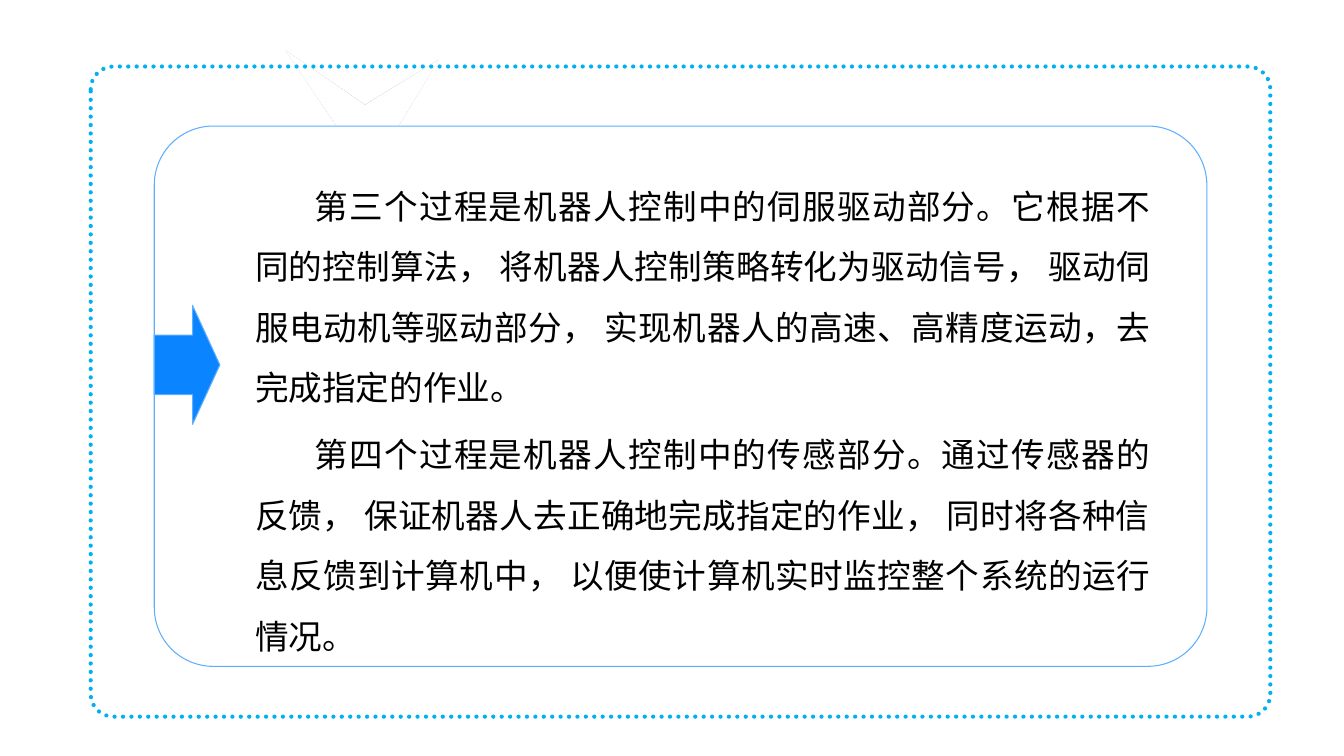
from lxml.etree import SubElement
from pptx import Presentation
from pptx.dml.color import RGBColor
from pptx.enum.dml import MSO_LINE
from pptx.enum.shapes import MSO_SHAPE
from pptx.enum.text import MSO_ANCHOR, MSO_AUTO_SIZE, PP_ALIGN
from pptx.oxml import parse_xml
from pptx.oxml.ns import nsdecls, qn
from pptx.util import Inches, Pt

WHITE = RGBColor(0xFF, 0xFF, 0xFF)
BLACK = RGBColor(0x00, 0x00, 0x00)
BLUE = RGBColor(0x0B, 0x85, 0xFF)
LIGHT_BLUE = RGBColor(0x5D, 0xAE, 0xFF)
SKY_BLUE = RGBColor(0x00, 0xB0, 0xF0)

PROCESSES = [
    "第三个过程是机器人控制中的伺服驱动部分。它根据不同的控制算法， 将机器人控制策略转化为驱动信号， "
    "驱动伺服电动机等驱动部分， 实现机器人的高速、高精度运动，去完成指定的作业。",
    "第四个过程是机器人控制中的传感部分。通过传感器的反馈， 保证机器人去正确地完成指定的作业， "
    "同时将各种信息反馈到计算机中， 以便使计算机实时监控整个系统的运行情况。",
]


class SlideBuilder:
    """Draws on one slide; every area is left, top, width, height in percent of the slide."""

    font_name = "Noto Sans CJK SC"
    font_size = Pt(24)
    line_spacing = 1.5
    first_line_indent = Inches(0.59)

    def __init__(self, presentation):
        self.width = presentation.slide_width
        self.height = presentation.slide_height
        self.slide = presentation.slides.add_slide(presentation.slide_layouts[1])
        title = self.slide.shapes.title
        title.element.getparent().remove(title.element)

    def place(self, area):
        sides = (self.width, self.height) * 2
        return [round(side * share / 100) for side, share in zip(sides, area)]

    def add_shape(self, kind, area, adjustments, fill=None, line=None, line_width=0.75):
        shape = self.slide.shapes.add_shape(kind, *self.place(area))
        shape.shadow.inherit = False
        for index, value in enumerate(adjustments):
            shape.adjustments[index] = value
        if fill is None:
            shape.fill.background()
        else:
            shape.fill.solid()
            shape.fill.fore_color.rgb = fill
        if line is None:
            shape.line.fill.background()
        else:
            shape.line.color.rgb = line
            shape.line.width = Pt(line_width)
        return shape

    def add_fading_star(self, area):
        """Adds a tilted star whose white fill fades between centre and edge."""
        star = self.add_shape(MSO_SHAPE.STAR_4_POINT, area, [0.125])
        star.rotation = 315
        gradient = parse_xml(
            f'<a:gradFill {nsdecls("a")} rotWithShape="1"><a:gsLst>'
            f'<a:gs pos="0"><a:srgbClr val="{WHITE}"/></a:gs>'
            f'<a:gs pos="100000"><a:srgbClr val="{WHITE}"><a:alpha val="0"/></a:srgbClr></a:gs>'
            '</a:gsLst><a:path path="shape">'
            '<a:fillToRect l="50000" t="50000" r="50000" b="50000"/></a:path></a:gradFill>'
        )
        properties = star.element.spPr
        properties.replace(properties.find(qn("a:noFill")), gradient)

    def add_dotted_frame(self, area):
        frame = self.add_shape(MSO_SHAPE.ROUNDED_RECTANGLE, area, [0.035],
                               line=SKY_BLUE, line_width=3)
        frame.line.dash_style = MSO_LINE.ROUND_DOT
        frame.element.spPr.find(qn("a:ln")).set("cap", "rnd")

    def add_body(self, area, texts):
        body = self.slide.placeholders[1]
        # The placeholder exists before the shapes, so it moves to the front here.
        self.slide.shapes.element.append(body.element)
        body.left, body.top, body.width, body.height = self.place(area)
        frame = body.text_frame
        frame.word_wrap = True
        frame.auto_size = MSO_AUTO_SIZE.SHAPE_TO_FIT_TEXT
        frame.vertical_anchor = MSO_ANCHOR.TOP
        for index, text in enumerate(texts):
            paragraph = frame.add_paragraph() if index else frame.paragraphs[0]
            self.format_paragraph(paragraph, Pt(4.8) if index else Pt(0))
            self.add_run(paragraph, text)

    def format_paragraph(self, paragraph, space_before):
        paragraph.alignment = PP_ALIGN.JUSTIFY
        paragraph.line_spacing = self.line_spacing
        paragraph.space_before = space_before
        paragraph.space_after = Pt(0)
        properties = paragraph._p.get_or_add_pPr()
        properties.set("marL", "0")
        properties.set("indent", str(self.first_line_indent))
        SubElement(properties, qn("a:buNone"))

    def add_run(self, paragraph, text):
        run = paragraph.add_run()
        run.text = text
        run.font.name = self.font_name
        run.font.size = self.font_size
        run.font.color.rgb = BLACK
        east_asian = SubElement(run._r.get_or_add_rPr(), qn("a:ea"))
        east_asian.set("typeface", self.font_name)


def main():
    presentation = Presentation()
    presentation.slide_width = Inches(13.33)
    presentation.slide_height = Inches(7.5)
    builder = SlideBuilder(presentation)

    builder.add_fading_star((19.73, 2.27, 15.08, 30.4))
    builder.add_shape(MSO_SHAPE.ROUNDED_RECTANGLE, (11.48, 16.67, 78.32, 71.47),
                      [0.109], WHITE, LIGHT_BLUE)
    builder.add_shape(MSO_SHAPE.RIGHT_ARROW, (11.48, 40.4, 4.88, 15.73),
                      [0.5, 0.416], BLUE, LIGHT_BLUE)
    builder.add_body((18.23, 21.2, 68.12, 67.07), PROCESSES)
    builder.add_dotted_frame((6.75, 8.8, 87.77, 86))

    presentation.save("out.pptx")


if __name__ == "__main__":
    main()
